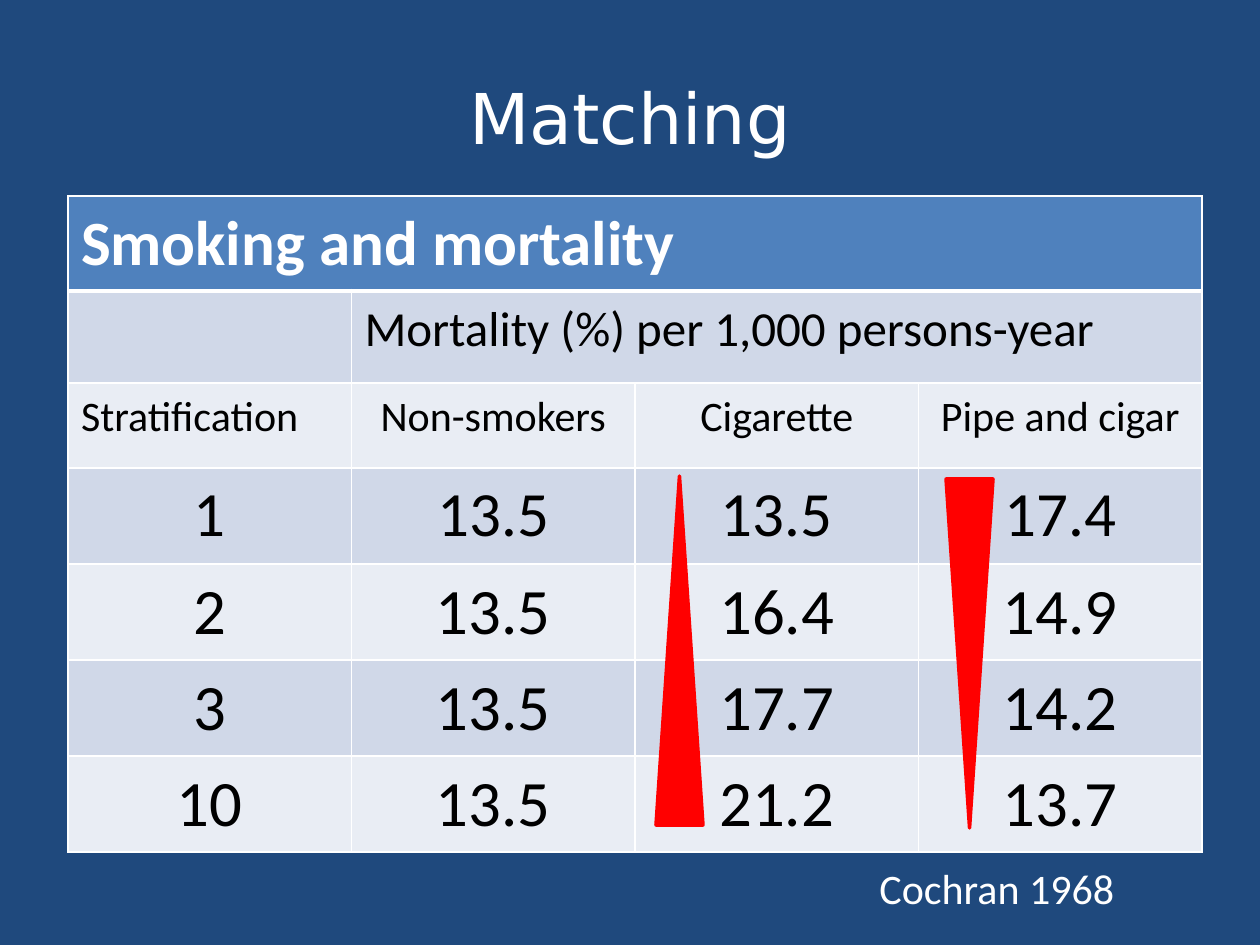
import lxml.etree
import pptx
import pptx.dml.color
import pptx.enum.shapes
import pptx.enum.text
import pptx.oxml
import pptx.oxml.ns
import pptx.util

SCALE = 914400 / 126
WHITE, BLACK, RED, NAVY, BLUE = "FFFFFF", "000000", "FF0000", "1F497D", "4F81BD"
BANDS = ["E9EDF4", "D0D8E8"]
LEFT, CENTER = pptx.enum.text.PP_ALIGN.LEFT, pptx.enum.text.PP_ALIGN.CENTER
HEADINGS = ["Stratification", "Non-smokers", "Cigarette", "Pipe and cigar"]
MORTALITY = [
    ["1", "13.5", "13.5", "17.4"],
    ["2", "13.5", "16.4", "14.9"],
    ["3", "13.5", "17.7", "14.2"],
    ["10", "13.5", "21.2", "13.7"],
]
ROW_HEIGHTS = [95, 92, 85] + [96] * len(MORTALITY)


def px(length):
    """Turn px into EMU."""
    return pptx.util.Emu(round(length * SCALE))


def color(value):
    """Turn a hex string into a colour."""
    return pptx.dml.color.RGBColor.from_string(value)


def apply(target, values):
    """Set each attribute of a dict on an object."""
    for name, value in values.items():
        setattr(target, name, value)


def paint(fill, value):
    """Make a fill solid."""
    fill.solid()
    fill.fore_color.rgb = color(value)


def write(frame, text, size, ink, align=LEFT, font="Calibri", bold=False):
    """Write one formatted paragraph into a text frame."""
    para = frame.paragraphs[0]
    para.alignment = align
    span = para.add_run()
    span.text = text
    apply(span.font, {"size": pptx.util.Pt(size), "name": font, "bold": bold})
    span.font.color.rgb = color(ink)


def add_label(page, box, text, size, wrap=True, **style):
    """Place a line of white text in a box."""
    frame = page.shapes.add_textbox(*map(px, box)).text_frame
    anchor = pptx.enum.text.MSO_ANCHOR
    apply(frame, {"word_wrap": wrap,
                  "vertical_anchor": anchor.MIDDLE if wrap else anchor.TOP})
    write(frame, text, size, WHITE, **style)


def add_borders(cell, bottom):
    """Draw white borders round a cell."""
    properties = cell._tc.get_or_add_tcPr()
    widths = {"lnL": 1, "lnR": 1, "lnT": 1, "lnB": bottom}
    for index, (side, width) in enumerate(widths.items()):
        line = pptx.oxml.parse_xml(
            f'<a:{side} {pptx.oxml.ns.nsdecls("a")} w="{pptx.util.Pt(width)}">'
            f'<a:solidFill><a:srgbClr val="{WHITE}"/></a:solidFill></a:{side}>')
        properties.insert(index, line)


def add_mortality_table(page, box):
    """Place the smoking and mortality table in a box."""
    rows, columns = len(ROW_HEIGHTS), len(HEADINGS)
    table = page.shapes.add_table(rows, columns, *map(px, box)).table
    apply(table, {"first_row": False, "horz_banding": False})
    for row, height in zip(table.rows, ROW_HEIGHTS):
        row.height = px(height)
    for column in table.columns:
        column.width = px(box[2] / columns)
    for row in range(rows):
        for column in range(columns):
            cell = table.cell(row, column)
            apply(cell, {"margin_left": px(13), "margin_right": px(13),
                         "margin_top": px(9), "margin_bottom": px(9)})
            paint(cell.fill, BANDS[row % 2] if row else BLUE)
            add_borders(cell, 1 if row else 3)
    table.cell(0, 0).merge(table.cell(0, columns - 1))
    table.cell(1, 1).merge(table.cell(1, columns - 1))
    write(table.cell(0, 0).text_frame, "Smoking and mortality", 36, WHITE, bold=True)
    write(table.cell(1, 1).text_frame, "Mortality (%) per 1,000 persons-year", 28, BLACK)
    for column, heading in enumerate(HEADINGS):
        align = CENTER if column else LEFT
        write(table.cell(2, column).text_frame, heading, 24, BLACK, align)
    for row, values in enumerate(MORTALITY):
        for column, value in enumerate(values):
            size = 37 if row else 36
            write(table.cell(row + 3, column).text_frame, value, size, BLACK, CENTER)


def add_trend_wedge(page, box, rotation):
    """Place a red wedge that widens with mortality."""
    kind = pptx.enum.shapes.MSO_SHAPE.ISOSCELES_TRIANGLE
    wedge = page.shapes.add_shape(kind, *map(px, box))
    wedge.rotation = rotation
    wedge.shadow.inherit = False
    paint(wedge.fill, RED)
    paint(wedge.line.fill, RED)
    wedge.line.width = pptx.util.Pt(2)


def main():
    """Build the matching slide."""
    deck = pptx.Presentation()
    apply(deck, {"slide_width": px(1260), "slide_height": px(945)})
    page = deck.slides.add_slide(deck.slide_layouts[6])
    paint(page.background.fill, NAVY)
    add_label(page, (63, 38, 1134, 157), "Matching", 40, align=CENTER, font="DejaVu Sans")
    add_mortality_table(page, (68, 196, 1134, sum(ROW_HEIGHTS)))
    add_label(page, (867, 856, 263, 63), "Cochran 1968", 24, wrap=False)
    add_trend_wedge(page, (656, 476, 47, 349), 0)
    add_trend_wedge(page, (946, 479, 47, 349), 180)
    deck.save("out.pptx")


if __name__ == "__main__":
    main()
